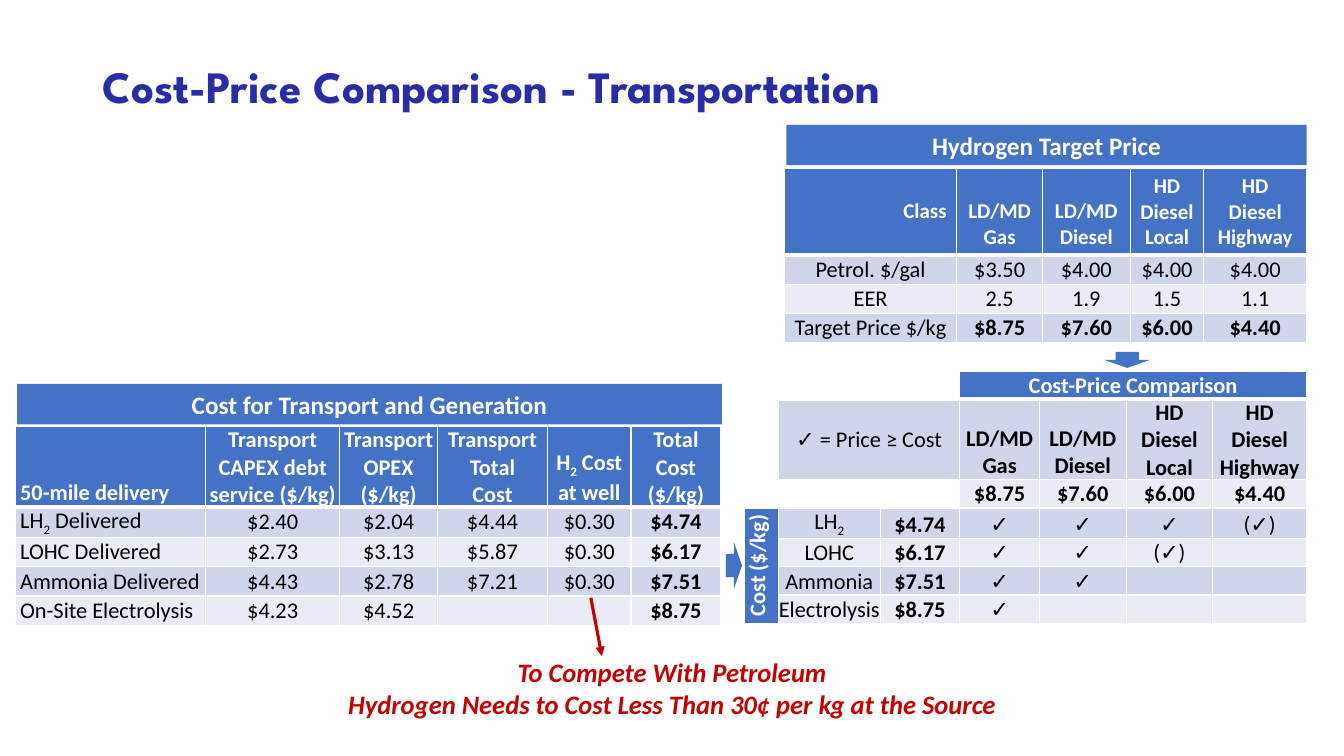
from lxml import etree
from pptx import Presentation
from pptx.dml.color import RGBColor
from pptx.enum.shapes import MSO_CONNECTOR, MSO_SHAPE
from pptx.enum.text import MSO_ANCHOR, PP_ALIGN
from pptx.oxml.ns import qn
from pptx.util import Emu, Pt

LEFT, CENTER, RIGHT = PP_ALIGN.LEFT, PP_ALIGN.CENTER, PP_ALIGN.RIGHT
MIDDLE, BOTTOM = MSO_ANCHOR.MIDDLE, MSO_ANCHOR.BOTTOM
RECTANGLE, DOWN_ARROW = MSO_SHAPE.RECTANGLE, MSO_SHAPE.DOWN_ARROW
STRAIGHT = MSO_CONNECTOR.STRAIGHT

EMU_PER_PX = 9144  # 100 px to the inch
COLORS = {"title": "282DA5", "blue": "4472C4", "band": "CFD5EA", "pale": "E9EBF5",
          "white": "FFFFFF", "black": "000000", "red": "C00000"}
BODY_FONT, TITLE_FONT = "Calibri", "League Spartan"

# "\n" starts a paragraph, "\v" breaks a line, "_" lowers the next character.
CLASSES = ["LD/MD\vGas", "LD/MD\vDiesel", "HD\nDiesel\nLocal", "HD\vDiesel\nHighway"]
TARGET_PRICES = ["$8.75", "$7.60", "$6.00", "$4.40"]
TARGET_ROWS = [
    ["Class", *CLASSES],
    ["Petrol. $/gal", "$3.50", "$4.00", "$4.00", "$4.00"],
    ["EER", "2.5", "1.9", "1.5", "1.1"],
    ["Target Price $/kg", *TARGET_PRICES],
]
COST_ROWS = [
    ["50-mile delivery", "Transport\nCAPEX debt service ($/kg)", "Transport\nOPEX\v($/kg)",
     "Transport\nTotal\vCost", "H_2 Cost at well", "Total Cost\v($/kg)"],
    ["LH_2 Delivered", "$2.40", "$2.04", "$4.44", "$0.30", "$4.74"],
    ["LOHC Delivered", "$2.73", "$3.13", "$5.87", "$0.30", "$6.17"],
    ["Ammonia Delivered", "$4.43", "$2.78", "$7.21", "$0.30", "$7.51"],
    ["On-Site Electrolysis", "$4.23", "$4.52", "", "", "$8.75"],
]
# None marks a cell without a fill or one covered by a merge.
COMPARISON_ROWS = [
    [None] * 4 + ["Cost-Price Comparison", None, None, None],
    [None, "✓ = Price ≥ Cost", None, None, *CLASSES],
    [None] * 4 + TARGET_PRICES,
    ["Cost ($/kg)", "LH_2", "$4.74", None, "✓", "✓", "✓", "(✓)"],
    [None, "LOHC", "$6.17", None, "✓", "✓", "(✓)", ""],
    [None, "Ammonia", "$7.51", None, "✓", "✓", "", ""],
    [None, "Electrolysis", "$8.75", None, "✓", "", "", ""],
]
COMPARISON_MERGES = [(0, 1, 0, 2), (0, 4, 0, 7), (1, 1, 1, 3), (2, 2, 2, 3), (3, 0, 6, 0),
                     *[(row, 2, row, 3) for row in range(3, 7)]]


def px(length):
    return Emu(length * EMU_PER_PX)


def rgb(name):
    return RGBColor.from_string(COLORS[name])


def write_line(paragraph, text):
    """Fill a paragraph; a character after "_" becomes a subscript."""
    if "_" not in text:
        paragraph.text = text
        return
    before, after = text.split("_")
    for part in (before, after[0], after[1:]):
        if part:
            run = paragraph.add_run()
            run.text = part
            if part == after[0]:
                run.font._element.set("baseline", "-25000")


def write_text(frame, text, size, color, bold=True, italic=False, align=CENTER,
               font_name=BODY_FONT):
    for index, line in enumerate(text.split("\n")):
        paragraph = frame.add_paragraph() if index else frame.paragraphs[0]
        write_line(paragraph, line)
        paragraph.alignment = align
        font = paragraph.font
        font.name, font.size, font.bold, font.italic = font_name, Pt(size), bold, italic
        font.color.rgb = rgb(color)
        if not line:
            etree.SubElement(paragraph._p, qn("a:endParaRPr"), sz=str(size * 100))


def set_borders(cell, row):
    """White 1 pt edges, with a 3 pt rule under the first row."""
    thick_edge = {0: "B", 1: "T"}.get(row)
    for edge in "LRTB":
        width = Pt(3 if edge == thick_edge else 1)
        line = etree.SubElement(cell._tc.get_or_add_tcPr(), qn(f"a:ln{edge}"), w=str(width))
        fill = etree.SubElement(line, qn("a:solidFill"))
        etree.SubElement(fill, qn("a:srgbClr"), val=COLORS["white"])


def add_table(slide, left, top, widths, heights, rows, is_header, is_bold, anchor):
    frame = slide.shapes.add_table(len(rows), len(widths), px(left), px(top),
                                   px(sum(widths)), px(sum(heights)))
    table = frame.table
    table.first_row = table.horz_banding = False
    for column, width in zip(table.columns, widths):
        column.width = px(width)
    for row, height in zip(table.rows, heights):
        row.height = px(height)
    for r, texts in enumerate(rows):
        for c, text in enumerate(texts):
            cell = table.cell(r, c)
            header = is_header(r, c)
            set_borders(cell, r)
            cell.margin_left = cell.margin_right = cell.margin_top = cell.margin_bottom = 0
            cell.vertical_anchor = BOTTOM if header else anchor
            write_text(cell.text_frame, text or "", 16, "white" if header else "black",
                       header or is_bold(r, c))
            if text is None:
                cell.fill.background()
            else:
                cell.fill.solid()
                cell.fill.fore_color.rgb = rgb(
                    "blue" if header else "band" if r % 2 else "pale")
    return table


def add_target_table(slide):
    table = add_table(slide, 778, 167, [171, 85, 87, 73, 102], [86, 29, 29, 29], TARGET_ROWS,
                      lambda r, c: r == 0, lambda r, c: r == 3 and c > 0, MIDDLE)
    for column in range(len(table.columns)):
        cell = table.cell(0, column)
        cell.margin_left = cell.margin_right = px(10)
        cell.margin_top = cell.margin_bottom = px(5)
        for paragraph in cell.text_frame.paragraphs:
            paragraph.font.size = Pt(15)
    class_cell = table.cell(0, 0)
    class_cell.vertical_anchor = MIDDLE
    class_cell.text_frame.paragraphs[0].alignment = RIGHT


def add_cost_table(slide):
    table = add_table(slide, 15, 423, [189, 133, 97, 109, 83, 89], [80, 29, 29, 29, 29],
                      COST_ROWS, lambda r, c: r == 0, lambda r, c: c == 5, MIDDLE)
    for row in range(len(table.rows)):
        cell = table.cell(row, 0)
        cell.margin_left = px(5)
        cell.text_frame.paragraphs[0].alignment = LEFT


def add_comparison_table(slide):
    table = add_table(slide, 738, 368, [34, 101, 33, 46, 79, 86, 86, 93],
                      [28, 80] + [28] * 5, COMPARISON_ROWS,
                      lambda r, c: r == 0 or (r >= 3 and c == 0),
                      lambda r, c: (r < 3 and c >= 4) or (r >= 3 and c == 2), BOTTOM)
    for top, left, bottom, right in COMPARISON_MERGES:
        table.cell(top, left).merge(table.cell(bottom, right))
    legend, cost_label = table.cell(1, 1), table.cell(3, 0)
    legend.vertical_anchor = cost_label.vertical_anchor = MIDDLE
    cost_label._tc.get_or_add_tcPr().set("vert", "vert270")


def add_title(slide, text):
    frame = slide.shapes.add_textbox(px(92), px(40), px(1150), px(97)).text_frame
    frame.word_wrap = True
    frame.vertical_anchor = MIDDLE
    write_text(frame, text, 32, "title", align=LEFT, font_name=TITLE_FONT)
    frame.paragraphs[0].line_spacing = 0.9


def add_block(slide, kind, left, top, width, height, fill="blue"):
    shape = slide.shapes.add_shape(kind, px(left), px(top), px(width), px(height))
    shape.shadow.inherit = False
    shape.fill.solid()
    shape.fill.fore_color.rgb = rgb(fill)
    shape.line.fill.background()
    return shape


def add_banner(slide, text, left, top, width):
    banner = add_block(slide, RECTANGLE, left, top, width, 40)
    write_text(banner.text_frame, text, 18, "white")


def add_conclusion(slide, text):
    box = add_block(slide, RECTANGLE, 256, 645, 821, 74, "white")
    write_text(box.text_frame, text, 19, "red", italic=True)


def add_pointer(slide, start_x, start_y, end_x, end_y):
    pointer = slide.shapes.add_connector(STRAIGHT, px(start_x), px(start_y),
                                         px(end_x), px(end_y))
    pointer.line.color.rgb = rgb("red")
    pointer.line.width = Pt(2.25)
    etree.SubElement(pointer.line._get_or_add_ln(), qn("a:tailEnd"), type="triangle")
    etree.SubElement(pointer._element.spPr, qn("a:effectLst"))


def main():
    presentation = Presentation()
    presentation.slide_width, presentation.slide_height = px(1333), px(750)
    slide = presentation.slides.add_slide(presentation.slide_layouts[6])
    add_title(slide, "Cost-Price Comparison - Transportation")
    add_comparison_table(slide)
    add_target_table(slide)
    add_cost_table(slide)
    add_banner(slide, "Hydrogen Target Price", 780, 124, 516)
    add_banner(slide, "Cost for Transport and Generation", 17, 381, 699)
    add_conclusion(slide, "To Compete With Petroleum\n"
                          "Hydrogen Needs to Cost Less Than 30¢ per kg at the Source")
    add_block(slide, DOWN_ARROW, 1095, 349, 46, 16)
    add_block(slide, DOWN_ARROW, 705, 553, 46, 16).rotation = 270
    add_pointer(slide, 586, 593, 597, 651)
    presentation.save("out.pptx")


if __name__ == "__main__":
    main()
